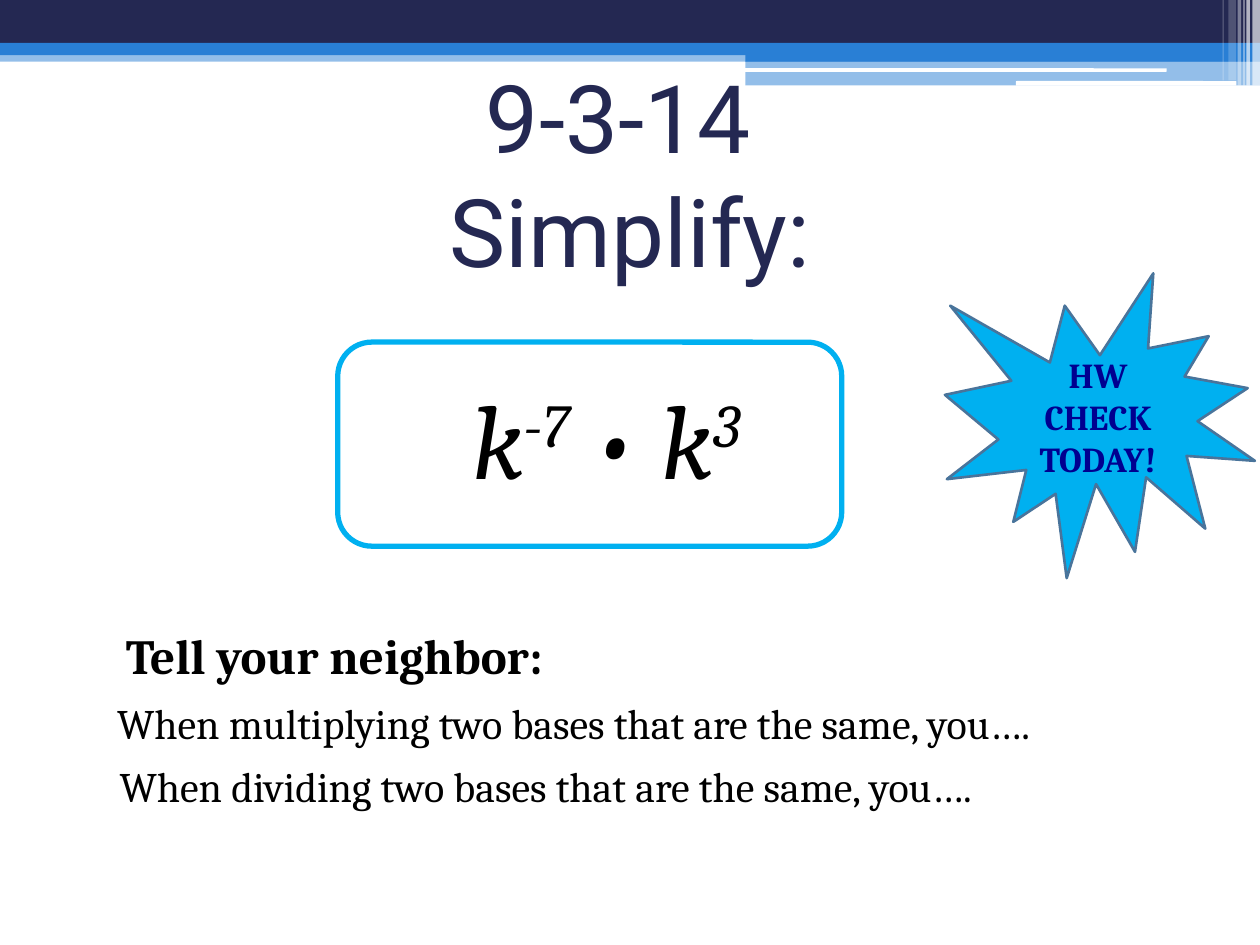
from dataclasses import dataclass

from lxml.etree import SubElement
from pptx import Presentation
from pptx.dml.color import RGBColor
from pptx.enum.shapes import MSO_SHAPE as SHAPE
from pptx.enum.text import MSO_ANCHOR as ANCHOR, PP_ALIGN as ALIGN
from pptx.oxml.ns import qn
from pptx.util import Pt


@dataclass(frozen=True)
class Theme:
    navy: str = "242852"
    blue: str = "297FD5"
    sky: str = "00B0F0"
    burst_line: str = "49749B"
    burst_text: str = "000090"
    black: str = "000000"
    white: str = "FFFFFF"
    title_font: str = "Roboto"
    body_font: str = "Cambria"
    title_size: int = 54
    formula_size: int = 60
    heading_size: int = 28
    prompt_size: int = 24
    burst_size: int = 20


T = Theme()


def rgb(color):
    return RGBColor.from_string(color)


def add_shape(s, kind, box, fill=None, alpha=100, line=None, width=0):
    sp = s.shapes.add_shape(kind, *map(Pt, box))
    sp.shadow.inherit = False
    if fill:
        sp.fill.solid()
        sp.fill.fore_color.rgb = rgb(fill)
        if alpha < 100:
            clr = sp.fill._xPr.find(qn("a:solidFill"))[0]
            SubElement(clr, qn("a:alpha"), val=str(alpha * 1000))
    else:
        sp.fill.background()
    if line:
        sp.line.color.rgb = rgb(line)
        sp.line.width = Pt(width)
    else:
        sp.line.fill.background()
    return sp


def style(p, size, color=T.black, name=T.body_font, **flags):
    for r in p.runs:
        r.font.size = Pt(size)
        r.font.name = name
        r.font.color.rgb = rgb(color)
        for flag, value in flags.items():
            setattr(r.font, flag, value)


def add_text(s, box, text=""):
    tf = s.shapes.add_textbox(*map(Pt, box)).text_frame
    tf.word_wrap = True
    tf.text = text
    return tf.paragraphs[0]


def add_header(s, width):
    """Layered bands along the top, with pale vertical stripes at the right."""
    step = 426
    for left, top, height, color, alpha in (
        (0, 28.8, 6.5, T.blue, 50),
        (0, 0, 24.5, T.navy, 100),
        (0, 24.5, 7, T.blue, 100),
        (step, 28, 7.2, T.blue, 100),
        (step, 34.8, 14, T.blue, 50),
    ):
        add_shape(s, SHAPE.RECTANGLE, (left, top, width - left, height), color, alpha)
    for box in ((425.5, 39, 241.2, 2), (580.5, 46.3, 126, 2.7)):
        add_shape(s, SHAPE.ROUNDED_RECTANGLE, box, T.white)
    for left, stripe, height, alpha in (
        (715.7, 4.3, 49, 65), (712.2, 2, 49, 65), (710.5, 0.7, 49, 60),
        (707.2, 2, 49, 40), (702, 4.3, 46, 20), (698.6, 0.7, 46, 30),
    ):
        add_shape(s, SHAPE.RECTANGLE, (left, 0, stripe, height), T.white, alpha)


def set_title(s, box, text):
    title = s.shapes.title
    title.left, title.top, title.width, title.height = map(Pt, box)
    tf = title.text_frame
    tf.text = text
    tf.vertical_anchor = ANCHOR.MIDDLE
    p = tf.paragraphs[0]
    p.alignment = ALIGN.CENTER
    style(p, T.title_size, T.navy, T.title_font)


def add_formula(s, text_box, frame_box):
    p = add_text(s, text_box)
    p.alignment = ALIGN.CENTER
    p.space_before = Pt(3)
    p._p.get_or_add_pPr().set("marL", str(Pt(8.64)))
    for text, raised in (("k", False), ("-7", True), (" • k", False), ("3", True)):
        r = p.add_run()
        r.text = text
        if raised:
            r.font._element.set("baseline", "30000")
    style(p, T.formula_size, italic=True)
    add_shape(s, SHAPE.ROUNDED_RECTANGLE, frame_box, line=T.sky, width=3)


def add_prompts(s, width):
    for left, top, height, text, size, bold in (
        (64.8, 354.2, 41, "Tell your neighbor:", T.heading_size, True),
        (59.8, 395.3, 36, "When multiplying two bases that are the same, you….",
         T.prompt_size, False),
        (61.2, 431.3, 36, "When dividing two bases that are the same, you….",
         T.prompt_size, False),
    ):
        style(add_text(s, (left, top, width, height), text), size, bold=bold)


def add_burst(s, box, text):
    sp = add_shape(s, SHAPE.EXPLOSION1, box, T.sky, line=T.burst_line, width=1.5)
    tf = sp.text_frame
    tf.word_wrap = True
    tf.vertical_anchor = ANCHOR.MIDDLE
    tf.text = text
    p = tf.paragraphs[0]
    p.alignment = ALIGN.CENTER
    style(p, T.burst_size, T.burst_text, bold=True)


def main():
    prs = Presentation()
    prs.slide_width, prs.slide_height = Pt(720), Pt(540)
    s = prs.slides.add_slide(prs.slide_layouts[5])
    add_header(s, 720)
    set_title(s, (36, 41.8, 648, 113.8), "9-3-14 \vSimplify:")
    add_formula(s, (18, 210.2, 648, 87), (193, 195.5, 288, 116.6))
    add_prompts(s, 617.8)
    add_burst(s, (540, 156.2, 177.1, 174.2), "HW CHECK TODAY!")
    prs.save("out.pptx")


if __name__ == "__main__":
    main()
